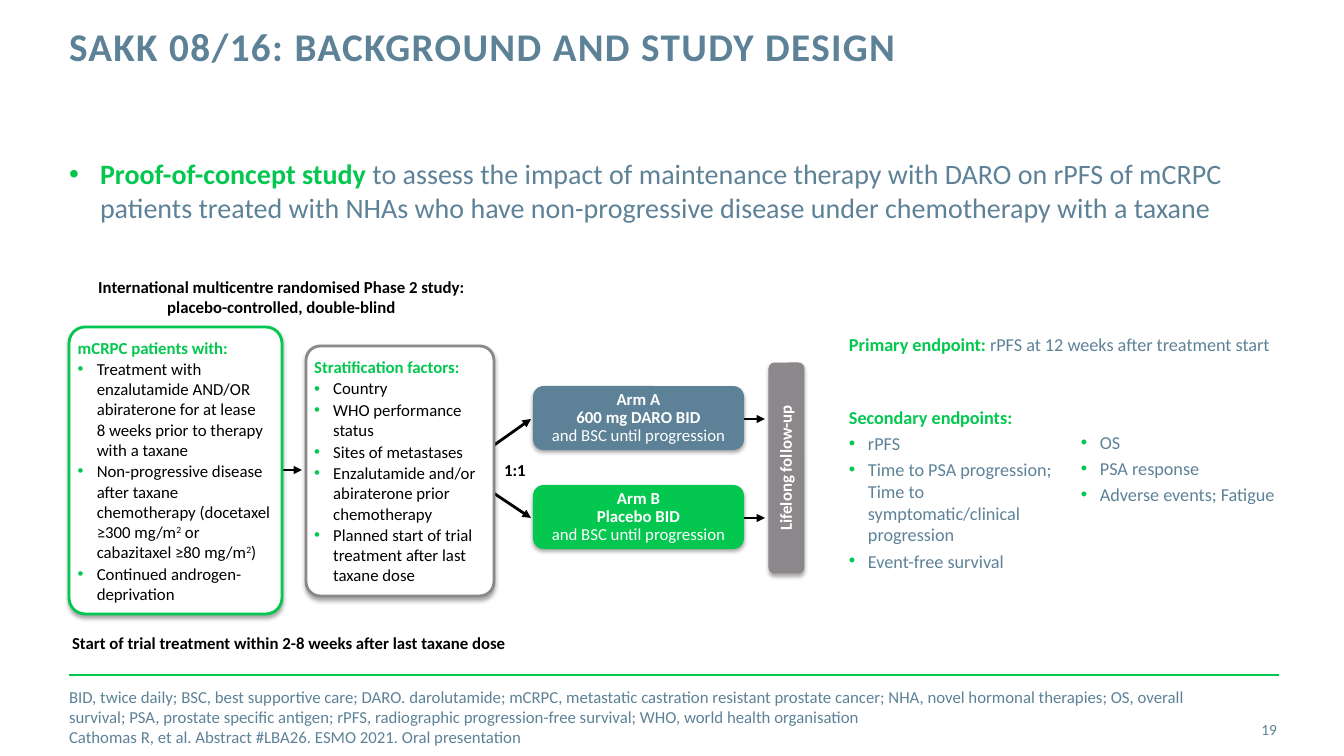
import pptx
import pptx.util
import pptx.dml.color
import pptx.enum.shapes
import pptx.enum.text
import pptx.oxml
import pptx.oxml.ns

RGB = pptx.dml.color.RGBColor
SHAPE = pptx.enum.shapes.MSO_SHAPE
ALIGN = pptx.enum.text.PP_ALIGN
ANCHOR = pptx.enum.text.MSO_ANCHOR
Pt = pptx.util.Pt
qn = pptx.oxml.ns.qn

GREEN = RGB(0x03, 0xC7, 0x4F)
BLUE = RGB(0x5D, 0x82, 0x98)
GREY = RGB(0x8B, 0x87, 0x8B)
BLACK = RGB(0, 0, 0)
WHITE = RGB(0xFF, 0xFF, 0xFF)
FONT = "Calibri"
SCALE = 914400 / 100.8
SPACE = 'xmlns:a="http://schemas.openxmlformats.org/drawingml/2006/main"'


def px(num):
    return pptx.util.Emu(round(num * SCALE))


def style(run, size, color, bold=False):
    run.font.name = FONT
    run.font.size = Pt(size)
    run.font.bold = bold
    run.font.color.rgb = color


def add(para, text, size, color, bold=False):
    """Append one styled run to a paragraph."""
    run = para.add_run()
    run.text = text
    style(run, size, color, bold)
    return run


def write(frame, text, size, color, bold=False, align=ALIGN.LEFT):
    """Fill a frame, one paragraph per line; \\v breaks a line."""
    frame.word_wrap = True
    frame.margin_left = frame.margin_right = 0
    frame.margin_top = frame.margin_bottom = 0
    frame.text = text
    for para in frame.paragraphs:
        para.alignment = align
        for run in para.runs:
            style(run, size, color, bold)
        for brk in para._p.findall(qn("a:br")):
            brk.get_or_add_rPr().set("sz", str(size * 100)) if hasattr(
                brk, "get_or_add_rPr") else brk.append(pptx.oxml.parse_xml(
                    f'<a:rPr {SPACE} sz="{size * 100}"/>'))
    return frame


def label(slide, box, text, size, color, bold=False, align=ALIGN.LEFT):
    frame = slide.shapes.add_textbox(*map(px, box)).text_frame
    return write(frame, text, size, color, bold, align)


def bullet(para, indent):
    props = para._p.get_or_add_pPr()
    props.set("marL", str(px(indent)))
    props.set("indent", str(-px(indent)))
    for part in (f'<a:buClr {SPACE}><a:srgbClr val="{GREEN}"/></a:buClr>',
                 f'<a:buFont {SPACE} typeface="Arial"/>',
                 f'<a:buChar {SPACE} char="•"/>'):
        props.append(pptx.oxml.parse_xml(part))


def panel(slide, box, fill, line=None, round_by=None):
    """Rounded box with a soft shadow below it."""
    shape = slide.shapes.add_shape(SHAPE.ROUNDED_RECTANGLE, *map(px, box))
    shape.fill.solid()
    shape.fill.fore_color.rgb = fill
    if line is None:
        shape.line.fill.background()
    else:
        shape.line.color.rgb = line
        shape.line.width = Pt(2)
    if round_by is not None:
        shape.adjustments[0] = round_by
    shape.shadow.inherit = False
    glow = shape._element.spPr.find(qn("a:effectLst"))
    glow.append(pptx.oxml.parse_xml(
        f'<a:outerShdw {SPACE} blurRad="{Pt(3.1)}" dist="{Pt(1.8)}" '
        'dir="5400000" rotWithShape="0"><a:srgbClr val="000000">'
        '<a:alpha val="35000"/></a:srgbClr></a:outerShdw>'))
    shape.text_frame.vertical_anchor = ANCHOR.MIDDLE
    return shape


def rule(slide, ends, color, arrow=False):
    line = slide.shapes.add_connector(
        pptx.enum.shapes.MSO_CONNECTOR.STRAIGHT, *map(px, ends))
    line.line.color.rgb = color
    line.line.width = Pt(2)
    if arrow:
        line.line._get_or_add_ln().append(
            pptx.oxml.parse_xml(f'<a:tailEnd {SPACE} type="triangle"/>'))
    line._element.spPr.append(pptx.oxml.parse_xml(f"<a:effectLst {SPACE}/>"))


def title(slide, box):
    head = slide.shapes.title
    head.left, head.top, head.width, head.height = map(px, box)
    frame = write(head.text_frame, "SAKK 08/16: BACKGROUND AND STUDY DESIGN",
                  28, BLUE, True)
    frame.auto_size = pptx.enum.text.MSO_AUTO_SIZE.NONE
    frame.vertical_anchor = ANCHOR.TOP
    para = frame.paragraphs[0]
    para.line_spacing = Pt(30)
    para.runs[0].font._element.set("spc", "100")


def intro(slide, box):
    para = label(slide, box, "Proof-of-concept study ", 20, GREEN,
                 True).paragraphs[0]
    bullet(para, 31)
    add(para, "to assess the impact of maintenance therapy with DARO on rPFS "
        "of mCRPC patients treated with NHAs who have non-progressive disease "
        "under chemotherapy with a taxane", 20, BLUE)


def factors(slide, box, line, head, items):
    """Outlined box with a heading and bullets; ^ marks a raised 2."""
    frame = panel(slide, box, WHITE, line, 0.076).text_frame
    write(frame, head, 12, GREEN, True)
    frame.margin_left = px(4)
    for item in items:
        para = frame.add_paragraph()
        first, *rest = item.split("^")
        para.text = first
        para.alignment = ALIGN.LEFT
        para.space_before = Pt(1)
        bullet(para, 19)
        for run in para.runs:
            style(run, 12, BLACK)
        for brk in para._p.findall(qn("a:br")):
            brk.append(pptx.oxml.parse_xml(f'<a:rPr {SPACE} sz="1200"/>'))
        for part in rest:
            power = add(para, "2", 12, BLACK)
            power.font._element.set("baseline", "30000")
            add(para, part, 12, BLACK)


def arm(slide, box, fill, name, dose):
    frame = write(panel(slide, box, fill).text_frame,
                  f"{name}\v{dose}\vand BSC until progression",
                  12, WHITE, True, ALIGN.CENTER)
    para = frame.paragraphs[0]
    para.line_spacing = 0.9
    para.runs[-1].font.bold = False


def design(slide, left, top):
    """Flow from patients through the two arms to follow-up."""
    mid = top + 193
    label(slide, (left + 11, top, 403, 40),
          "International multicentre randomised Phase 2 study:\v"
          "placebo-controlled, double-blind", 12, BLACK, True, ALIGN.CENTER)
    rows = (top + 142, top + 241)
    rule(slide, (left + 158, mid, left + 233, mid), BLACK, True)
    for row in rows:
        rule(slide, (left + 390, mid, left + 462, row), BLACK, True)
        rule(slide, (left + 620, row, left + 696, row), BLACK, True)
    factors(slide, (left, top + 50, 213, 287), GREEN, "mCRPC patients with:", (
        "Treatment with enzalutamide AND/OR abiraterone for at lease\v"
        "8 weeks prior to therapy with a taxane",
        "Non-progressive disease after taxane chemotherapy (docetaxel "
        "≥300 mg/m^ or cabazitaxel ≥80 mg/m^)",
        "Continued androgen-deprivation"))
    factors(slide, (left + 237, top + 69, 188, 250), GREY,
            "Stratification factors:", (
                "Country", "WHO performance status", "Sites of metastases",
                "Enzalutamide and/or abiraterone prior chemotherapy",
                "Planned start of trial treatment after last taxane dose"))
    label(slide, (left + 431, mid - 10, 30, 20), "1:1", 12, BLACK, True,
          ALIGN.CENTER)
    arms = ((BLUE, "Arm A", "600 mg DARO BID"), (GREEN, "Arm B", "Placebo BID"))
    for row, parts in zip(rows, arms):
        arm(slide, (left + 464, row - 33, 211, 64), *parts)
    follow = panel(slide, (left + 612, top + 173, 211, 36), GREY)
    follow.rotation = 270
    write(follow.text_frame, "Lifelong follow-up", 12, WHITE, True,
          ALIGN.CENTER).paragraphs[0].line_spacing = 0.9
    label(slide, (left - 9, top + 356, 458, 20),
          "Start of trial treatment within 2-8 weeks after last taxane dose",
          12, BLACK, True, ALIGN.CENTER)


def goals(slide, left, top):
    """Primary and secondary endpoints."""
    first = label(slide, (left, top, 430, 22), "Primary endpoint: ", 13,
                  GREEN, True)
    add(first.paragraphs[0], "rPFS at 12 weeks after treatment start", 13, BLUE)
    main = label(slide, (left, top + 73, 213, 167),
                 "Secondary endpoints:\nrPFS\nTime to PSA progression; Time to "
                 "symptomatic/clinical progression\nEvent-free survival",
                 13, BLUE)
    style(main.paragraphs[0].runs[0], 13, GREEN, True)
    more = label(slide, (left + 232, top + 98, 210, 75),
                 "OS\nPSA response\nAdverse events; Fatigue", 13, BLUE)
    for para in main.paragraphs[1:] + more.paragraphs:
        bullet(para, 19)
    for para in main.paragraphs + more.paragraphs:
        para.space_after = Pt(3)


def foot(slide, left, top):
    rule(slide, (left, top, left + 1210, top), GREEN)
    note = label(
        slide, (left, top + 22, 1151, 40),
        "BID, twice daily; BSC, best supportive care; DARO. darolutamide; "
        "mCRPC, metastatic castration resistant prostate cancer; NHA, novel "
        "hormonal therapies; OS, overall survival; PSA, prostate specific "
        "antigen; rPFS, radiographic progression-free survival; WHO, world "
        "health organisation\nCathomas R, et al. Abstract #LBA26. ESMO 2021. "
        "Oral presentation", 12, BLUE)
    page = label(slide, (left + 1121, top + 34, 87, 40), "19", 11, BLUE,
                 align=ALIGN.RIGHT)
    note.vertical_anchor = page.vertical_anchor = ANCHOR.MIDDLE


def main():
    deck = pptx.Presentation()
    deck.slide_width, deck.slide_height = px(1344), px(756)
    slide = deck.slides.add_slide(deck.slide_layouts[5])
    title(slide, (69, 27, 964, 89))
    intro(slide, (69, 157, 1231, 80))
    design(slide, 69, 277)
    goals(slide, 849, 333)
    foot(slide, 69, 675)
    deck.save("out.pptx")


if __name__ == "__main__":
    main()
